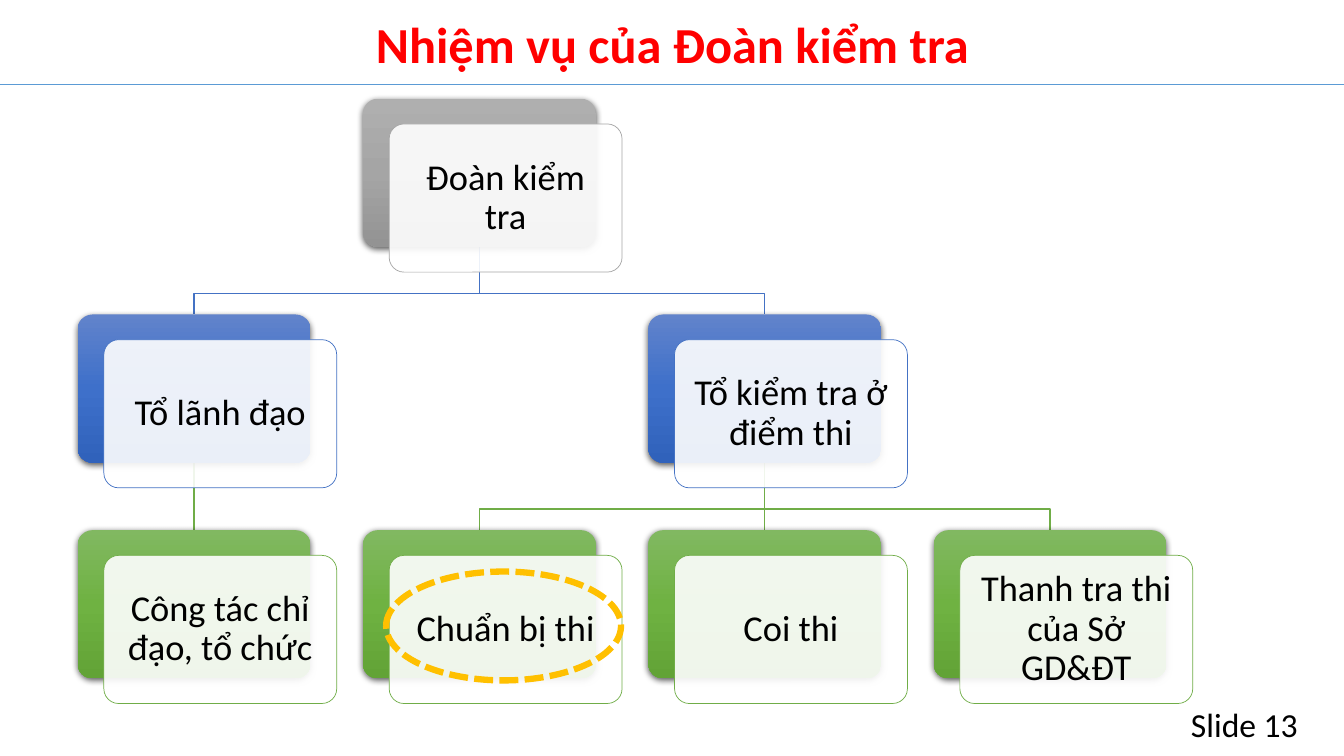
from copy import deepcopy

from lxml.etree import SubElement
from pptx import Presentation
from pptx.dml.color import RGBColor
from pptx.enum.dml import MSO_LINE
from pptx.enum.shapes import MSO_CONNECTOR, MSO_SHAPE
from pptx.enum.text import MSO_ANCHOR, PP_ALIGN
from pptx.oxml.ns import qn
from pptx.util import Inches, Pt

WIDTH, HEIGHT = 13.33, 7.5
LEFT, TOP = 0.77, 0.98
COLUMN, ROW = 2.83, 2.14
CARD_W, CARD_H = 2.31, 1.47
FRONT_DX, FRONT_DY = 0.26, 0.25
BEND = 0.46  # drop from a parent card to the horizontal part of its link

GRAY = ("A5A5A5", ["AFAFAF", "A5A5A5", "939393"])
BLUE = ("4472C4", ["6183CB", "3E70CA", "3062BB"])
GREEN = ("70AD47", ["81B861", "6FB242", "62A336"])

# key: (text, column, row, palette, parent key)
CARDS = {
    "team": ("Đoàn kiểm tra", 1, 0, GRAY, None),
    "leaders": ("Tổ lãnh đạo", 0, 1, BLUE, "team"),
    "site": ("Tổ kiểm tra ở điểm thi", 2, 1, BLUE, "team"),
    "direction": ("Công tác chỉ đạo, tổ chức", 0, 2, GREEN, "leaders"),
    "preparation": ("Chuẩn bị thi", 1, 2, GREEN, "site"),
    "supervision": ("Coi thi", 2, 2, GREEN, "site"),
    "inspection": ("Thanh tra thi của Sở GD&ĐT", 3, 2, GREEN, "site"),
}


def rgb(color):
    return RGBColor.from_string(color)


class OrgSlide:
    font = "Calibri"

    def __init__(self, deck):
        self.slide = deck.slides.add_slide(deck.slide_layouts[6])
        self.shapes = self.slide.shapes

    def set_text(self, frame, text, size, color="000000", bold=False,
                 align=PP_ALIGN.CENTER, spacing=0.9, anchor=MSO_ANCHOR.MIDDLE):
        frame.word_wrap = True
        frame.vertical_anchor = anchor
        paragraph = frame.paragraphs[0]
        paragraph.alignment = align
        paragraph.line_spacing = spacing
        run = paragraph.add_run()
        run.text = text
        run.font.name, run.font.size, run.font.bold = self.font, Pt(size), bold
        run.font.color.rgb = rgb(color)

    def label(self, x, y, w, h, text, size, **style):
        """Text box placed by shares of the slide's size."""
        box = self.shapes.add_textbox(Inches(x * WIDTH), Inches(y * HEIGHT),
                                      Inches(w * WIDTH), Inches(h * HEIGHT))
        self.set_text(box.text_frame, text, size, **style)

    def rule(self, y, color):
        """Thin line across the slide at a share of its height."""
        line = self.straight(0, Inches(y * HEIGHT), Inches(WIDTH), Inches(y * HEIGHT))
        line.line.color.rgb, line.line.width = rgb(color), Pt(0.5)

    def straight(self, *ends):
        line = self.shapes.add_connector(MSO_CONNECTOR.STRAIGHT, *ends)
        SubElement(line._element.spPr, qn("a:effectLst"))
        return line

    def rounded(self, column, row, dx=0, dy=0):
        shape = self.shapes.add_shape(
            MSO_SHAPE.ROUNDED_RECTANGLE,
            Inches(LEFT + column * COLUMN + dx), Inches(TOP + row * ROW + dy),
            Inches(CARD_W), Inches(CARD_H))
        shape.adjustments[0] = 0.1
        shape.shadow.inherit = False
        return shape

    def card(self, text, column, row, palette):
        """Shaded back plate with a translucent text plate; returns both."""
        accent, shades = palette
        back = self.rounded(column, row)
        self.shade(back, shades)
        back.line.fill.background()
        self.cast_shadow(back)

        front = self.rounded(column, row, FRONT_DX, FRONT_DY)
        front.fill.solid()
        front.fill.fore_color.rgb = rgb("FFFFFF")
        white = front._element.spPr.find(".//" + qn("a:srgbClr"))
        SubElement(white, qn("a:alpha"), val="90000")
        front.line.color.rgb, front.line.width = rgb(accent), Pt(0.5)
        frame = front.text_frame
        frame.margin_left = frame.margin_right = Inches(0.11)
        frame.margin_top = frame.margin_bottom = Inches(0.11)
        self.set_text(frame, text, 26)
        return back, front

    def shade(self, shape, shades):
        """Vertical gradient with evenly spaced stops."""
        shape.fill.gradient()
        shape.fill.gradient_angle = 270
        stop_list = shape._element.spPr.find(".//" + qn("a:gsLst"))
        while len(stop_list) < len(shades):
            stop_list.append(deepcopy(stop_list[-1]))
        for i, (stop, color) in enumerate(zip(shape.fill.gradient_stops, shades)):
            stop.position = i / (len(shades) - 1)
            stop.color.rgb = rgb(color)

    def cast_shadow(self, shape):
        effects = shape._element.spPr.find(qn("a:effectLst"))
        shadow = SubElement(effects, qn("a:outerShdw"), blurRad=str(Pt(4.5)),
                            dist=str(Pt(1.5)), dir="5400000", algn="ctr",
                            rotWithShape="0")
        black = SubElement(shadow, qn("a:srgbClr"), val="000000")
        SubElement(black, qn("a:alpha"), val="63000")

    def link(self, parent, child, color):
        """Line from parent to child, behind all cards."""
        start_x = parent.left + parent.width // 2
        start_y = parent.top + parent.height
        end_x = child.left + child.width // 2
        if start_x == end_x:
            line = self.straight(start_x, start_y, end_x, child.top)
            line.begin_connect(parent, 2)
            line.end_connect(child, 0)
        else:
            bend_y = start_y + Inches(BEND)
            builder = self.shapes.build_freeform(start_x, start_y)
            builder.add_line_segments(
                [(start_x, bend_y), (end_x, bend_y), (end_x, child.top)], close=False)
            line = builder.convert_to_shape()
            line.fill.background()
            line.shadow.inherit = False
        line.line.color.rgb, line.line.width = rgb(color), Pt(1)
        self.shapes._spTree.insert(2, line._element)

    def highlight(self, plate, color):
        """Dotted ellipse around the text of a plate."""
        ring = self.shapes.add_shape(
            MSO_SHAPE.OVAL, plate.left - Inches(0.03), plate.top + Inches(0.16),
            Inches(2.33), Inches(1.08))
        ring.shadow.inherit = False
        ring.fill.background()
        ring.line.color.rgb, ring.line.width = rgb(color), Pt(4.5)
        ring.line.dash_style = MSO_LINE.SQUARE_DOT


def main():
    deck = Presentation()
    deck.slide_width, deck.slide_height = Inches(WIDTH), Inches(HEIGHT)
    page = OrgSlide(deck)
    page.rule(0.112, "5B9BD5")
    page.label(0.772, 0.925, 0.201, 0.067, "Slide 13", 24, align=PP_ALIGN.RIGHT,
               spacing=1.0, anchor=MSO_ANCHOR.TOP)
    page.label(0.028, 0.025, 0.945, 0.076, "Nhiệm vụ của Đoàn kiểm tra", 36,
               color="FF0000", bold=True)

    plates = {}
    for key, (text, column, row, palette, _) in CARDS.items():
        plates[key] = page.card(text, column, row, palette)
    for key, (_, _, _, (accent, _), parent) in CARDS.items():
        if parent:
            page.link(plates[parent][0], plates[key][0], accent)
    page.highlight(plates["preparation"][1], "FFC000")
    deck.save("out.pptx")


if __name__ == "__main__":
    main()
